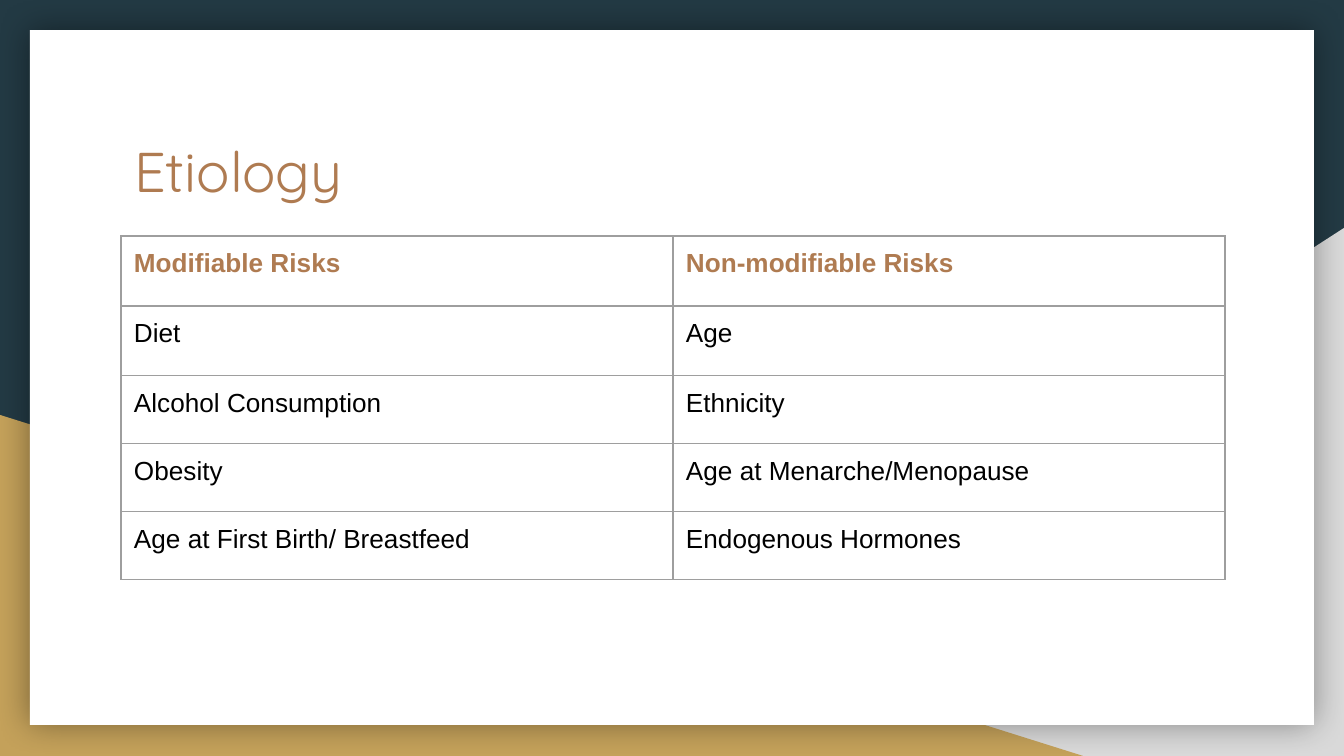
from lxml import etree
from pptx import Presentation
from pptx.dml.color import RGBColor
from pptx.enum.shapes import MSO_SHAPE
from pptx.enum.text import MSO_ANCHOR, PP_ALIGN
from pptx.oxml.ns import qn
from pptx.util import Emu, Pt

TRIANGLE, RECTANGLE = MSO_SHAPE.RIGHT_TRIANGLE, MSO_SHAPE.RECTANGLE
TOP, LEFT = MSO_ANCHOR.TOP, PP_ALIGN.LEFT

NAVY, GREY, GOLD, WHITE = "233A44", "D9D9D9", "C4A15A", "FFFFFF"
COPPER, BLACK, BORDER = "AF7B51", "000000", "9E9E9E"

TITLE = "Etiology"
RISKS = [
    ("Modifiable Risks", "Non-modifiable Risks"),
    ("Diet", "Age"),
    ("Alcohol Consumption", "Ethnicity"),
    ("Obesity", "Age at Menarche/Menopause"),
    ("Age at First Birth/ Breastfeed", "Endogenous Hormones"),
]

# left, top, width, height in px
SLIDE_SIZE = (1344, 756)
GREY_CORNER = (527, 228, 817, 528)
GOLD_CORNER = (0, 415, 1083, 341)
CARD = (30, 30, 1284, 695)
TITLE_BOX = (121, 124, 1104, 139)
TABLE_BOX = (121, 236, 1104, 344)
ROW_HEIGHTS = (70, 70, 68, 68, 68)
PADDING = 13


def px(length):
    return Emu(round(length * 914400 / 134.4))


def color(value):
    return RGBColor.from_string(value)


def add_panel(slide, kind, box, fill):
    panel = slide.shapes.add_shape(kind, *map(px, box))
    panel.shadow.inherit = False
    panel.fill.solid()
    panel.fill.fore_color.rgb = color(fill)
    panel.line.fill.background()
    return panel


def add_color_xml(parent, value):
    return etree.SubElement(parent, qn("a:srgbClr"), val=value)


def add_glow_shadow(panel, blur, opacity):
    """Give the panel an even black shadow on all sides."""
    effects = panel._element.spPr.find(qn("a:effectLst"))
    shadow = etree.SubElement(effects, qn("a:outerShdw"), blurRad=str(Pt(blur)),
                              dist="0", dir="0", algn="ctr", rotWithShape="0")
    etree.SubElement(add_color_xml(shadow, BLACK), qn("a:alpha"),
                     val=str(opacity * 1000))


def write(frame, text, size, font, fill, bold=False):
    paragraph = frame.paragraphs[0]
    paragraph.alignment = LEFT
    run = paragraph.add_run()
    run.text = text
    run.font.size = Pt(size)
    run.font.name = font
    run.font.bold = bold
    run.font.color.rgb = color(fill)


def pad(part):
    part.margin_left = part.margin_right = px(PADDING)
    part.margin_top = part.margin_bottom = px(PADDING)
    part.vertical_anchor = TOP


def add_borders(cell):
    properties = cell._tc.get_or_add_tcPr()
    for side in ("lnL", "lnR", "lnT", "lnB"):
        line = etree.SubElement(properties, qn(f"a:{side}"), w=str(Pt(0.75)))
        add_color_xml(etree.SubElement(line, qn("a:solidFill")), BORDER)


def add_risk_table(slide):
    table = slide.shapes.add_table(len(RISKS), len(RISKS[0]),
                                   *map(px, TABLE_BOX)).table
    table.first_row = table.horz_banding = False
    for row, height in zip(table.rows, ROW_HEIGHTS):
        row.height = px(height)
    for r, risks in enumerate(RISKS):
        header = r == 0
        for c, risk in enumerate(risks):
            cell = table.cell(r, c)
            pad(cell)
            add_borders(cell)
            cell.fill.background()
            write(cell.text_frame, risk, size=14, font="Arial",
                  fill=COPPER if header else BLACK, bold=header)


def main():
    deck = Presentation()
    deck.slide_width, deck.slide_height = map(px, SLIDE_SIZE)
    slide = deck.slides.add_slide(deck.slide_layouts[5])
    slide.background.fill.solid()
    slide.background.fill.fore_color.rgb = color(NAVY)

    grey_corner = add_panel(slide, TRIANGLE, GREY_CORNER, GREY)
    grey_corner._element.spPr.xfrm.set("flipH", "1")
    add_panel(slide, TRIANGLE, GOLD_CORNER, GOLD)
    add_glow_shadow(add_panel(slide, RECTANGLE, CARD, WHITE), blur=18, opacity=40)

    title = slide.shapes.title
    title.left, title.top, title.width, title.height = map(px, TITLE_BOX)
    pad(title.text_frame)
    write(title.text_frame, TITLE, size=30, font="Quicksand", fill=COPPER)
    slide.shapes._spTree.append(title._element)  # bring in front of the card

    add_risk_table(slide)
    deck.save("out.pptx")


if __name__ == "__main__":
    main()
